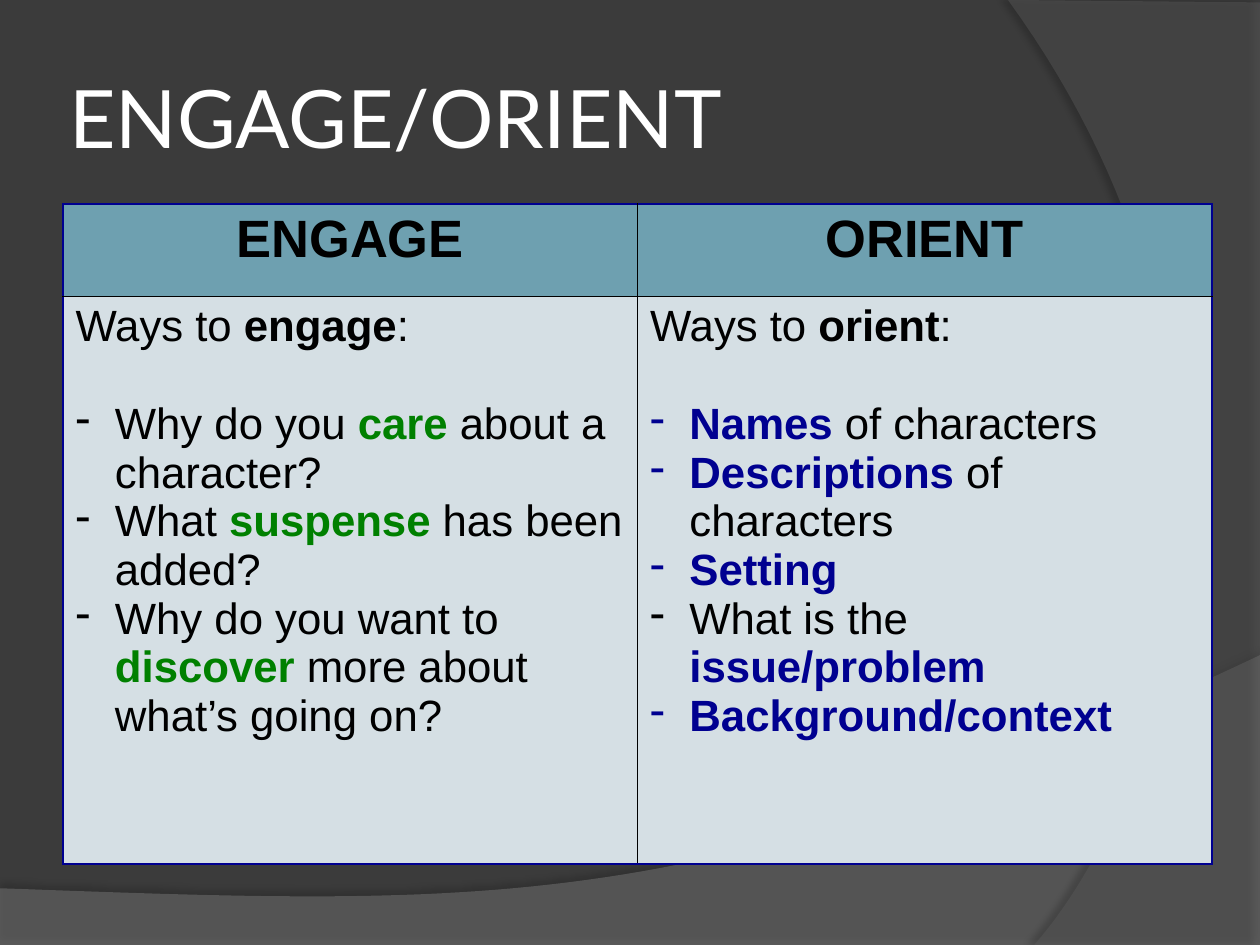
from lxml.etree import SubElement
from pptx import Presentation
from pptx.dml.color import RGBColor
from pptx.enum.text import MSO_ANCHOR, PP_ALIGN
from pptx.oxml import parse_xml
from pptx.oxml.ns import nsdecls, qn
from pptx.util import Pt

COLORS = {
    "background": "3B3B3B", "wave": "7F7F7F", "arc": "5E5E5E",
    "white": "FFFFFF", "black": "000000", "navy": "000090",
    "green": "008000", "header": "6EA0B0", "body": "D5DFE4",
}


def add_text(p, text, size=25, font="Arial", color="black", bold=False,
             accent="black", align=PP_ALIGN.LEFT, bullet=False, after=0):
    p.alignment = align
    p.space_after = Pt(after)
    if bullet:
        pPr = p._p.get_or_add_pPr()
        pPr.set("marL", str(Pt(22.5)))
        pPr.set("indent", str(-Pt(22.5)))
        SubElement(pPr, qn("a:buFontTx"))
        SubElement(pPr, qn("a:buChar")).set("char", "-")
    for i, part in enumerate(text.split("*")):
        if part:
            r = p.add_run()
            r.text = part
            r.font.size = Pt(size)
            r.font.name = font
            r.font.bold = bold or i % 2 == 1
            r.font.color.rgb = RGBColor.from_string(COLORS[accent if i % 2 else color])


def bezier(a, b, c, d, steps=60):
    for i in range(steps + 1):
        t = i / steps
        u = 1 - t
        yield tuple(u**3 * w + 3 * u * u * t * x + 3 * u * t * t * y + t**3 * z
                    for w, x, y, z in zip(a, b, c, d))


prs = Presentation()
prs.slide_width, prs.slide_height = Pt(720), Pt(540)
s = prs.slides.add_slide(prs.slide_layouts[6])
s.background.fill.solid()
s.background.fill.fore_color.rgb = RGBColor.from_string(COLORS["background"])

wave = [(0, 540.5), (720, 540.5),
        *bezier((720, 374.4), (402.5, 524.9), (281.5, 517.7), (0, 507.6))]
arc = [(720, 1.4), (720, 540),
       *bezier((591, 540), (673.2, 445.7), (733, 216), (576, 0))]
for points, color, alpha, shadow_alpha, distance, angle in (
        (wave, "wave", 45, 35, 3.5, 270), (arc, "arc", 40, 45, 4, 180)):
    points = [(Pt(x), Pt(y)) for x, y in points]
    builder = s.shapes.build_freeform(*points[0])
    builder.add_line_segments(points[1:])
    sp = builder.convert_to_shape()
    sp.line.fill.background()
    sp.fill.solid()
    sp.fill.fore_color.rgb = RGBColor.from_string(COLORS[color])
    fill_color = sp._element.spPr.find(qn("a:solidFill"))[0]
    SubElement(fill_color, qn("a:alpha")).set("val", str(alpha * 1000))
    sp._element.spPr.append(parse_xml(
        f'<a:effectLst {nsdecls("a")}><a:outerShdw blurRad="{Pt(4)}" '
        f'dist="{Pt(distance)}" dir="{angle * 60000}" rotWithShape="0">'
        f'<a:srgbClr val="{COLORS["black"]}"><a:alpha val="{shadow_alpha * 1000}"/>'
        '</a:srgbClr></a:outerShdw></a:effectLst>'))

title = s.shapes.add_textbox(Pt(36), Pt(21.6), Pt(588), Pt(90))
tf = title.text_frame
tf.word_wrap = True
tf.vertical_anchor = MSO_ANCHOR.MIDDLE
tf.margin_left = tf.margin_right = tf.margin_top = tf.margin_bottom = Pt(3.6)
add_text(tf.paragraphs[0], "ENGAGE/ORIENT", size=46, font="Lato", color="white")

columns = [
    ("ENGAGE", "Ways to *engage*:", "green", [
        "Why do you *care *about a character?",
        "What *suspense *has been added?",
        "Why do you want to *discover *more about what’s going on?"]),
    ("ORIENT", "Ways to *orient*:", "navy", [
        "*Names *of characters",
        "*Descriptions *of characters",
        "*Setting*",
        "What is the *issue/problem*",
        "*Background/context*"]),
]
table = s.shapes.add_table(2, 2, Pt(36), Pt(116.5), Pt(656.6), Pt(377.3)).table
table.rows[0].height, table.rows[1].height = Pt(52.6), Pt(324.7)

for col, (heading, intro, accent, bullets) in enumerate(columns):
    table.columns[col].width = Pt(328.3)
    head, body = table.cell(0, col), table.cell(1, col)
    add_text(head.text_frame.paragraphs[0], heading, size=30, bold=True,
             align=PP_ALIGN.CENTER)
    tf = body.text_frame
    add_text(tf.paragraphs[0], intro, after=28)
    for bullet in bullets:
        add_text(tf.add_paragraph(), bullet, accent=accent, bullet=True)
    for row, (cell, color) in enumerate(((head, "header"), (body, "body"))):
        cell.fill.solid()
        cell.fill.fore_color.rgb = RGBColor.from_string(COLORS[color])
        outer = {"L": col == 0, "R": col == 1, "T": row == 0, "B": row == 1}
        for i, (side, is_outer) in enumerate(outer.items()):
            width, line = (1, "navy") if is_outer else (0.5, "black")
            cell._tc.get_or_add_tcPr().insert(i, parse_xml(
                f'<a:ln{side} {nsdecls("a")} w="{Pt(width)}"><a:solidFill>'
                f'<a:srgbClr val="{COLORS[line]}"/></a:solidFill></a:ln{side}>'))

prs.save("out.pptx")
